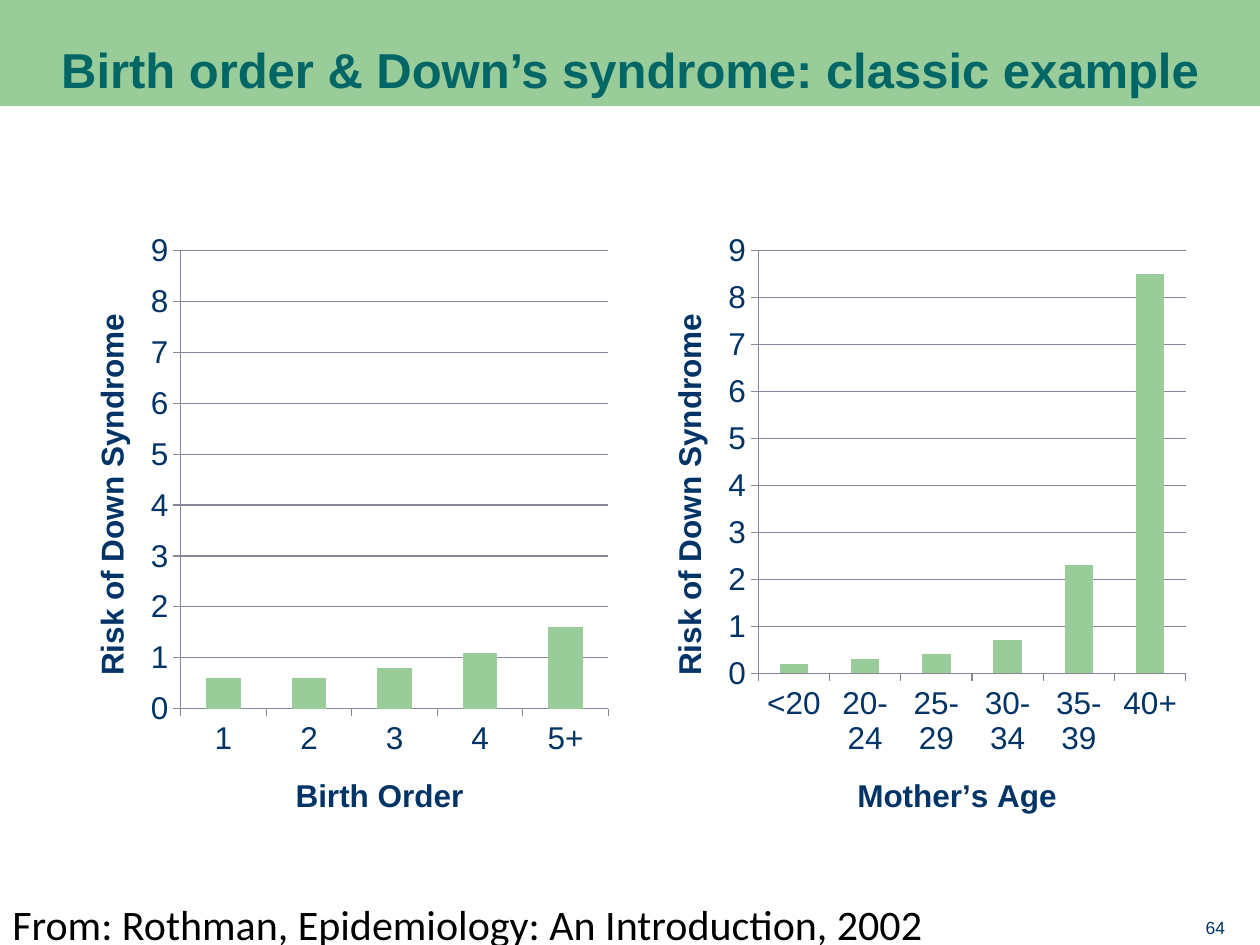
"""Build a slide comparing Down syndrome risk by birth order and by mother's age."""
from pptx import Presentation
from pptx.chart.data import CategoryChartData
from pptx.dml.color import RGBColor
from pptx.enum.chart import XL_CHART_TYPE, XL_TICK_MARK
from pptx.enum.text import MSO_ANCHOR, MSO_AUTO_SIZE, PP_ALIGN
from pptx.util import Pt

COLORS = {"green": "99CC99", "teal": "006666", "navy": "003366", "grid": "868699", "black": "000000"}
HEADING = "Birth order & Down’s syndrome: classic example"
CITATION = "From: Rothman, Epidemiology: An Introduction, 2002"
PAGE = "64"
RISK = "Risk of Down Syndrome"
PANELS = [
    ("Birth Order", XL_CHART_TYPE.COLUMN_CLUSTERED, 0,
     {"1": 0.6, "2": 0.6, "3": 0.8, "4": 1.1, "5+": 1.6}),
    ("Mother’s Age", XL_CHART_TYPE.COLUMN_STACKED, 100,
     {"<20": 0.2, "20-24": 0.3, "25-29": 0.4, "30-34": 0.7, "35-39": 2.3, "40+": 8.5}),
]
SLIDE_W, SLIDE_H = 720, 540
MARGIN, GAP = 36, 12
PANEL_TOP, PANEL_H = 126, 356.4
PANEL_W = (SLIDE_W - 2 * MARGIN - GAP) / 2


def rgb(name):
    return RGBColor.from_string(COLORS[name])


def style(font, size, color, bold=False, face="Arial"):
    font.name, font.size, font.bold = face, Pt(size), bold
    font.color.rgb = rgb(color)


def write(frame, text, align, size, color, **options):
    paragraph = frame.paragraphs[0]
    paragraph.alignment = align
    run = paragraph.add_run()
    run.text = text
    style(run.font, size, color, **options)
    return paragraph


def add_label(slide, box, text, wrap, *formatting, **options):
    frame = slide.shapes.add_textbox(*map(Pt, box)).text_frame
    frame.word_wrap = wrap
    frame.auto_size = MSO_AUTO_SIZE.SHAPE_TO_FIT_TEXT
    write(frame, text, *formatting, **options)


def format_axis(axis, label):
    axis.major_tick_mark = XL_TICK_MARK.OUTSIDE
    axis.minor_tick_mark = XL_TICK_MARK.NONE
    axis.format.line.color.rgb = rgb("grid")
    style(axis.tick_labels.font, 18, "navy")
    write(axis.axis_title.text_frame, label, PP_ALIGN.CENTER, 18, "navy", bold=True)


def add_panel(slide, left, factor, kind, overlap, risks):
    data = CategoryChartData()
    data.categories = list(risks)
    data.add_series("Series 1", list(risks.values()))
    box = map(Pt, (left, PANEL_TOP, PANEL_W, PANEL_H))
    chart = slide.shapes.add_chart(kind, *box, data).chart
    chart.has_title = chart.has_legend = False
    style(chart.font, 18, "navy")
    format_axis(chart.category_axis, factor)
    format_axis(chart.value_axis, RISK)
    scale = chart.value_axis
    scale.minimum_scale, scale.maximum_scale, scale.major_unit = 0, 9, 1
    scale.has_major_gridlines = True
    scale.major_gridlines.format.line.color.rgb = rgb("grid")
    plot = chart.plots[0]
    plot.gap_width, plot.overlap, plot.vary_by_categories = 150, overlap, False
    bars = plot.series[0].format.fill
    bars.solid()
    bars.fore_color.rgb = rgb("green")


def add_heading(slide):
    heading = slide.shapes.title
    heading.left, heading.top, heading.width, heading.height = map(Pt, (0, 0, SLIDE_W, 60))
    heading.fill.solid()
    heading.fill.fore_color.rgb = rgb("green")
    heading.line.color.rgb = rgb("green")
    heading.line.width = Pt(0.75)
    frame = heading.text_frame
    frame.auto_size = MSO_AUTO_SIZE.NONE
    frame.vertical_anchor = MSO_ANCHOR.BOTTOM
    write(frame, HEADING, PP_ALIGN.CENTER, 28, "teal", bold=True).line_spacing = 0.9


def main():
    deck = Presentation()
    deck.slide_width, deck.slide_height = Pt(SLIDE_W), Pt(SLIDE_H)
    slide = deck.slides.add_slide(deck.slide_layouts.get_by_name("Title Only"))
    add_heading(slide)
    for column, panel in enumerate(PANELS):
        add_panel(slide, MARGIN + column * (PANEL_W + GAP), *panel)
    add_label(slide, (0, 510, 570, 36), CITATION, True, PP_ALIGN.LEFT, 24, "black", face="Calibri")
    add_label(slide, (681, 520.5, 27, 19.5), PAGE, False, PP_ALIGN.CENTER, 10, "navy")
    deck.save("out.pptx")


if __name__ == "__main__":
    main()
